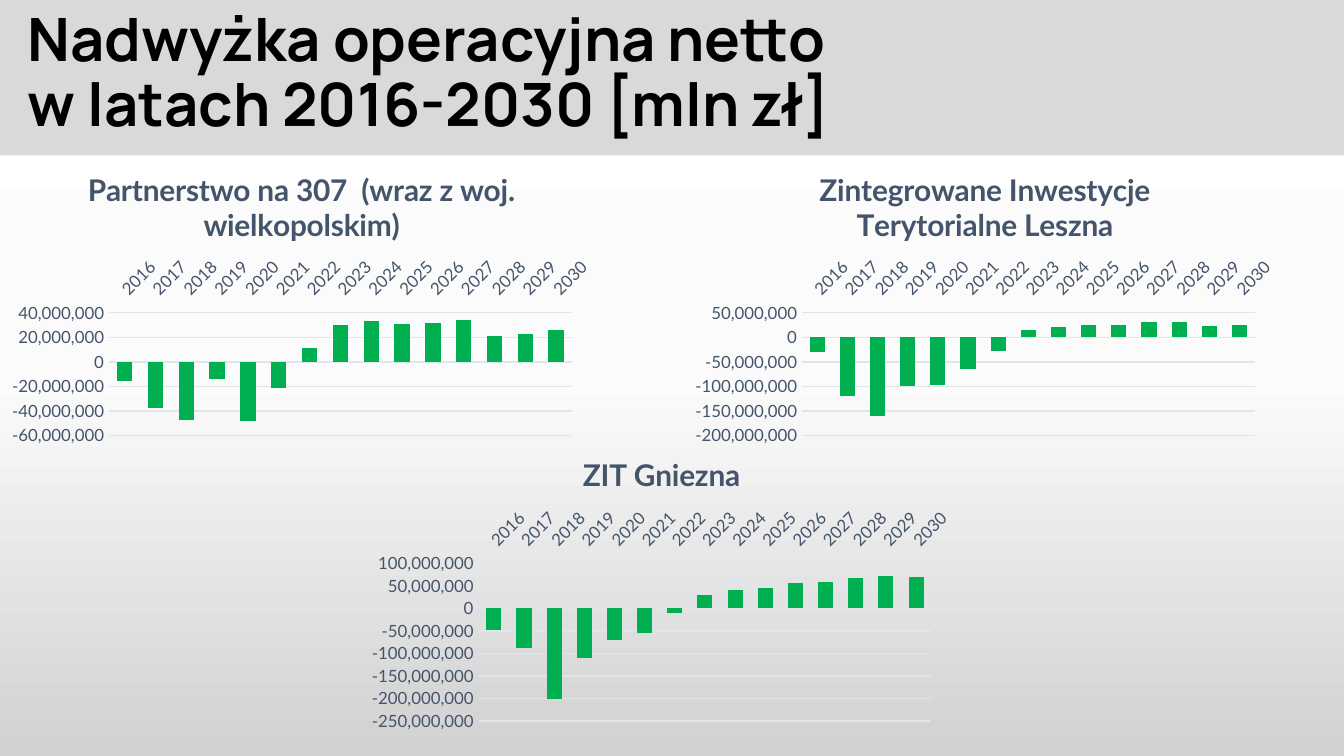
from copy import deepcopy

from pptx import Presentation
from pptx.chart.data import CategoryChartData
from pptx.dml.color import RGBColor
from pptx.enum.chart import XL_CHART_TYPE, XL_TICK_LABEL_POSITION, XL_TICK_MARK
from pptx.enum.shapes import MSO_SHAPE
from pptx.enum.text import MSO_ANCHOR, MSO_AUTO_SIZE, PP_ALIGN
from pptx.util import Emu, Pt

COLUMNS = XL_CHART_TYPE.COLUMN_CLUSTERED
HIGH = XL_TICK_LABEL_POSITION.HIGH
NO_TICK = XL_TICK_MARK.NONE
RECTANGLE = MSO_SHAPE.RECTANGLE
MIDDLE = MSO_ANCHOR.MIDDLE
NO_FIT = MSO_AUTO_SIZE.NONE
LEFT = PP_ALIGN.LEFT

EMU_PER_PX = 9525
MILLION = 1_000_000
TITLE_ONLY = 5
YEARS = [str(year) for year in range(2016, 2031)]
CHART_WIDTH, CHART_HEIGHT = 431, 216

CHARTS = [
    ("Partnerstwo na 307  (wraz z woj. wielkopolskim)", 0, 107, (-60, 40, 20),
     [-16, -38, -47, -14, -48, -21, 11, 30, 33, 31, 32, 34, 21, 23, 26]),
    ("Zintegrowane Inwestycje Terytorialne Leszna", 488, 107, (-200, 50, 50),
     [-31, -120, -160, -100, -97, -65, -28, 14, 20, 25, 26, 32, 31, 24, 26]),
    ("ZIT Gniezna", 257, 311, (-250, 100, 50),
     [-47, -87, -200, -110, -71, -55, -11, 30, 41, 46, 57, 59, 68, 73, 70]),
]


def color(value):
    return RGBColor.from_string(value)


def px(*lengths):
    return [Emu(length * EMU_PER_PX) for length in lengths]


class SlideBuilder:
    """Holds the style and the current slide, and adds each kind of element."""

    title_font, chart_font = "Manrope", "Lato"
    black, slate, grid, green, band_fill = "000000", "44546A", "E0E5EB", "00B050", "D9D9D9"

    def __init__(self, slide):
        self.slide = slide

    def style_font(self, font, name, size, value, bold=False):
        font.name, font.size, font.bold = name, Pt(size), bold
        font.color.rgb = color(value)

    def background(self, stops):
        fill = self.slide.background.fill
        fill.gradient()
        fill.gradient_angle = 270
        stop_list = self.slide.element.find(".//{*}gsLst")
        stop_list.insert(1, deepcopy(stop_list[0]))
        for stop, (position, value) in zip(fill.gradient_stops, stops):
            stop.position = position
            stop.color.rgb = color(value)

    def band(self, left, top, width, height):
        band = self.slide.shapes.add_shape(RECTANGLE, *px(left, top, width, height))
        band.shadow.inherit = False
        band.fill.solid()
        band.fill.fore_color.rgb = color(self.band_fill)
        band.line.fill.background()
        self.slide.shapes.title.element.addprevious(band.element)

    def title(self, text, left, top, width, height):
        box = self.slide.shapes.title
        box.left, box.top, box.width, box.height = px(left, top, width, height)
        frame = box.text_frame
        frame.text = text
        frame.word_wrap = True
        frame.auto_size = NO_FIT
        frame.vertical_anchor = MIDDLE
        para = frame.paragraphs[0]
        para.alignment = LEFT
        para.line_spacing = 0.9
        self.style_font(para.font, self.title_font, 32, self.black, True)

    def axis(self, axis, line):
        axis.major_tick_mark = axis.minor_tick_mark = NO_TICK
        self.style_font(axis.tick_labels.font, self.chart_font, 9, self.slate)
        line.color.rgb = color(self.grid)
        line.width = Pt(0.75)

    def chart(self, name, left, top, limits, values):
        data = CategoryChartData(number_format="#,##0")
        data.categories = YEARS
        data.add_series(name, [value * MILLION for value in values])
        place = px(left, top, CHART_WIDTH, CHART_HEIGHT)
        chart = self.slide.shapes.add_chart(COLUMNS, *place, data).chart
        self.style_font(chart.font, self.chart_font, 10, self.black)
        chart.has_legend = False

        para = chart.chart_title.text_frame.paragraphs[0]
        para.text = name
        self.style_font(para.font, self.chart_font, 16, self.slate, True)
        chart.chart_title.include_in_layout = False

        plot = chart.plots[0]
        plot.gap_width, plot.overlap = 100, -24
        plot.vary_by_categories = False
        series = plot.series[0]
        series.invert_if_negative = False
        series.format.fill.solid()
        series.format.fill.fore_color.rgb = color(self.green)

        years, amounts = chart.category_axis, chart.value_axis
        self.axis(years, years.format.line)
        years.tick_label_position = HIGH
        label_body = chart.element.find(".//{*}catAx/{*}txPr/{*}bodyPr")
        label_body.set("rot", "-2700000")

        self.axis(amounts, amounts.major_gridlines.format.line)
        amounts.format.line.fill.background()
        amounts.tick_labels.number_format = "#,##0"
        amounts.tick_labels.number_format_is_linked = False
        low, high, step = [limit * MILLION for limit in limits]
        amounts.minimum_scale, amounts.maximum_scale, amounts.major_unit = low, high, step


def main():
    deck = Presentation()
    deck.slide_width, deck.slide_height = px(960, 540)
    page = SlideBuilder(deck.slides.add_slide(deck.slide_layouts[TITLE_ONLY]))
    page.background([(0, "FFFFFF"), (0.5, "FBFBFB"), (1, "D1D1D1")])
    page.band(-2, -1, 962, 112)
    page.title("Nadwyżka operacyjna netto\vw latach 2016-2030 [mln zł]", 10, 1, 828, 105)
    for chart in CHARTS:
        page.chart(*chart)
    deck.save("out.pptx")


if __name__ == "__main__":
    main()
